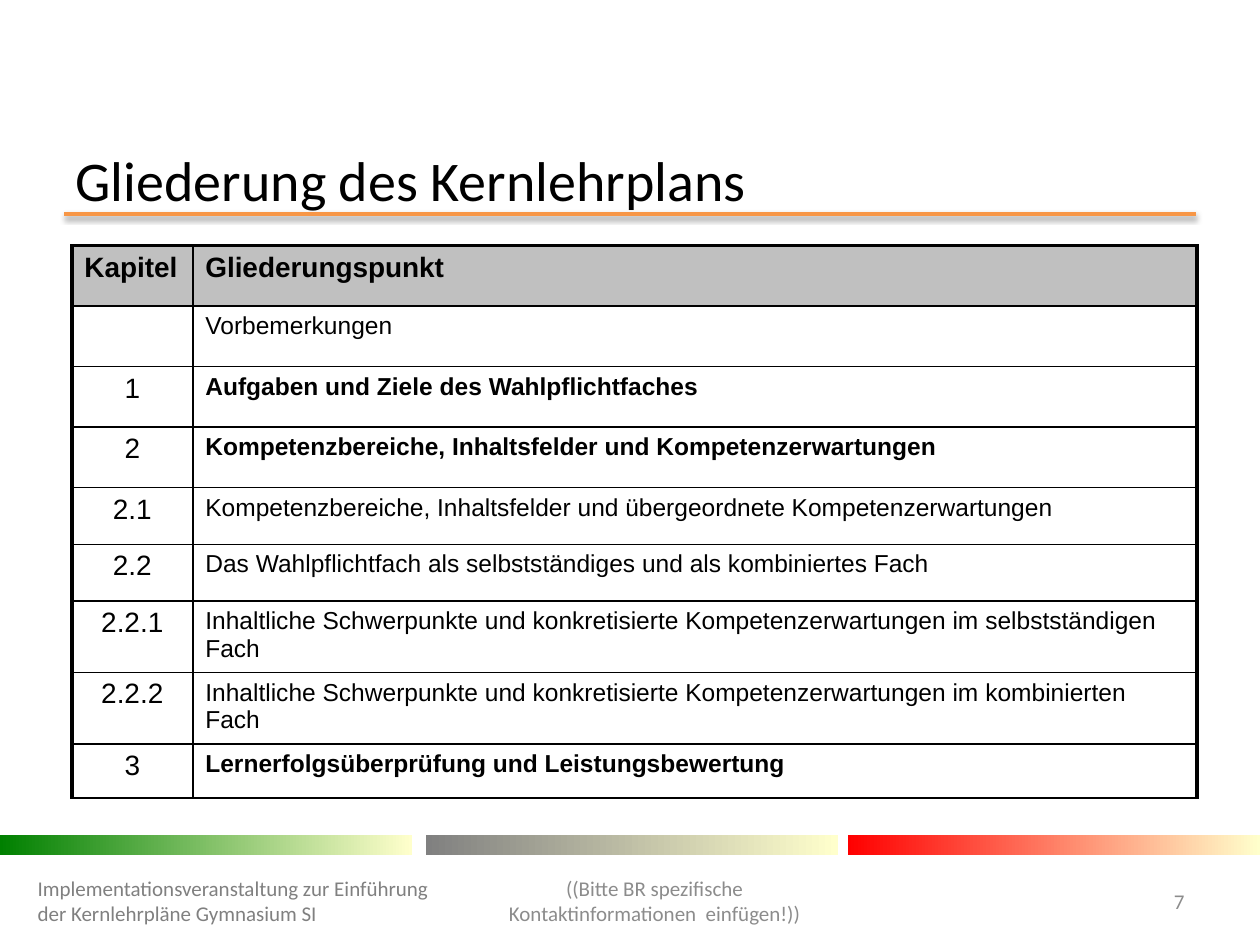
from lxml import etree
from pptx import Presentation
from pptx import oxml
from pptx.dml.color import RGBColor
from pptx.enum import shapes, text
from pptx.oxml import ns
from pptx.util import Inches, Pt

BLACK = RGBColor(0x00, 0x00, 0x00)
GRAY = RGBColor(0x80, 0x80, 0x80)
FOOTER_GRAY = RGBColor(0x8C, 0x8C, 0x8C)
HEADER_GRAY = RGBColor(0xC0, 0xC0, 0xC0)
ORANGE = RGBColor(0xF7, 0x96, 0x46)
GREEN = RGBColor(0x00, 0x80, 0x00)
RED = RGBColor(0xFF, 0x00, 0x00)
CREAM = RGBColor(0xFF, 0xFF, 0xCC)

LEFT, CENTER, RIGHT = text.PP_ALIGN.LEFT, text.PP_ALIGN.CENTER, text.PP_ALIGN.RIGHT

CHAPTERS = [
    ("Kapitel", "Gliederungspunkt", True),
    ("", "Vorbemerkungen", False),
    ("1", "Aufgaben und Ziele des Wahlpflichtfaches", True),
    ("2", "Kompetenzbereiche, Inhaltsfelder und Kompetenzerwartungen", True),
    ("2.1", "Kompetenzbereiche, Inhaltsfelder und übergeordnete Kompetenzerwartungen", False),
    ("2.2", "Das Wahlpflichtfach als selbstständiges und als kombiniertes Fach", False),
    ("2.2.1", "Inhaltliche Schwerpunkte und konkretisierte Kompetenzerwartungen "
              "im selbstständigen Fach", False),
    ("2.2.2", "Inhaltliche Schwerpunkte und konkretisierte Kompetenzerwartungen "
              "im kombinierten Fach", False),
    ("3", "Lernerfolgsüberprüfung und Leistungsbewertung", True),
]
ROW_HEIGHTS = [0.48] * 4 + [0.45] * 4 + [0.43]
COLUMN_WIDTHS = [0.96, 7.97]


class SlideBuilder:
    heading_font = "Calibri"
    table_font = "Arial"

    def __init__(self, slide):
        self.slide = slide

    def set_text(self, text_frame, words, font, size, color, align=LEFT, bold=False):
        text_frame.text = words
        paragraph = text_frame.paragraphs[0]
        paragraph.alignment = align
        for run in paragraph.runs:
            run.font.name = font
            run.font.size = Pt(size)
            run.font.bold = bold
            run.font.color.rgb = color

    def title(self, words, left, top, width, height):
        shape = self.slide.shapes.title
        shape.left, shape.top = Inches(left), Inches(top)
        shape.width, shape.height = Inches(width), Inches(height)
        shape.text_frame.auto_size = text.MSO_AUTO_SIZE.NONE
        shape.text_frame.vertical_anchor = text.MSO_ANCHOR.MIDDLE
        self.set_text(shape.text_frame, words, self.heading_font, 32, BLACK)

    def rule(self, left, right, y):
        line = self.slide.shapes.add_connector(
            shapes.MSO_CONNECTOR.STRAIGHT, Inches(left), Inches(y), Inches(right), Inches(y))
        line.line.color.rgb = ORANGE
        line.line.width = Pt(2)
        line._element.spPr.append(oxml.parse_xml(
            f'<a:effectLst {ns.nsdecls("a")}>'
            f'<a:outerShdw blurRad="{Pt(3.1)}" dist="{Pt(1.6)}" dir="5400000" rotWithShape="0">'
            '<a:srgbClr val="000000"><a:alpha val="38000"/></a:srgbClr>'
            '</a:outerShdw></a:effectLst>'))

    def gradient_bar(self, left, top, width, height, color):
        bar = self.slide.shapes.add_shape(
            shapes.MSO_SHAPE.RECTANGLE, Inches(left), Inches(top), Inches(width), Inches(height))
        bar.shadow.inherit = False
        bar.line.fill.background()
        bar.fill.gradient()
        bar.fill.gradient_angle = 0
        for stop, position, stop_color in zip(bar.fill.gradient_stops, (0, 1), (color, CREAM)):
            stop.position = position
            stop.color.rgb = stop_color

    def footer(self, words, left, top, width, height, align, color):
        box = self.slide.shapes.add_textbox(
            Inches(left), Inches(top), Inches(width), Inches(height))
        box.text_frame.word_wrap = True
        box.text_frame.vertical_anchor = text.MSO_ANCHOR.MIDDLE
        self.set_text(box.text_frame, words, self.heading_font, 12, color, align)

    def borders(self, cell, **widths):
        properties = cell._tc.get_or_add_tcPr()
        for side in "LRTB":
            line = etree.SubElement(properties, ns.qn(f"a:ln{side}"), w=str(Pt(widths[side])))
            fill = etree.SubElement(line, ns.qn("a:solidFill"))
            etree.SubElement(fill, ns.qn("a:srgbClr"), val=str(BLACK))

    def chapter_table(self, left, top):
        table = self.slide.shapes.add_table(
            len(CHAPTERS), len(COLUMN_WIDTHS), Inches(left), Inches(top),
            Inches(sum(COLUMN_WIDTHS)), Inches(sum(ROW_HEIGHTS))).table
        table.first_row = table.horz_banding = False
        for column, width in zip(table.columns, COLUMN_WIDTHS):
            column.width = Inches(width)
        for index, (number, topic, bold) in enumerate(CHAPTERS):
            header = index == 0
            table.rows[index].height = Inches(ROW_HEIGHTS[index])
            number_cell, topic_cell = table.cell(index, 0), table.cell(index, 1)
            self.set_text(number_cell.text_frame, number, self.table_font, 16, BLACK,
                          LEFT if header else CENTER, header)
            self.set_text(topic_cell.text_frame, topic, self.table_font,
                          16 if header else 14, BLACK, LEFT, bold)
            upper = 2.25 if header else 1
            self.borders(number_cell, L=2.25, R=1, T=upper, B=1)
            self.borders(topic_cell, L=1, R=2.25, T=upper, B=1)
            for cell in (number_cell, topic_cell):
                if header:
                    cell.fill.solid()
                    cell.fill.fore_color.rgb = HEADER_GRAY
                else:
                    cell.fill.background()


def main():
    presentation = Presentation()
    presentation.slide_width, presentation.slide_height = Inches(10), Inches(7.5)
    builder = SlideBuilder(presentation.slides.add_slide(presentation.slide_layouts[5]))
    builder.rule(0.51, 9.49, 1.7)
    for left, color in ((0, GREEN), (3.38, GRAY), (6.73, RED)):
        builder.gradient_bar(left, 6.63, 3.27, 0.16, color)
    builder.title("Gliederung des Kernlehrplans", 0.5, 1.23, 9, 0.39)
    builder.footer("Implementationsveranstaltung zur Einführung der Kernlehrpläne Gymnasium SI",
                   0.2, 6.95, 3.31, 0.4, LEFT, GRAY)
    builder.footer("((Bitte BR spezifische Kontaktinformationen  einfügen!))",
                   3.74, 6.79, 2.91, 0.71, CENTER, FOOTER_GRAY)
    builder.footer("7", 8.86, 6.95, 0.64, 0.4, RIGHT, FOOTER_GRAY)
    builder.chapter_table(0.57, 1.95)
    presentation.save("out.pptx")


if __name__ == "__main__":
    main()
